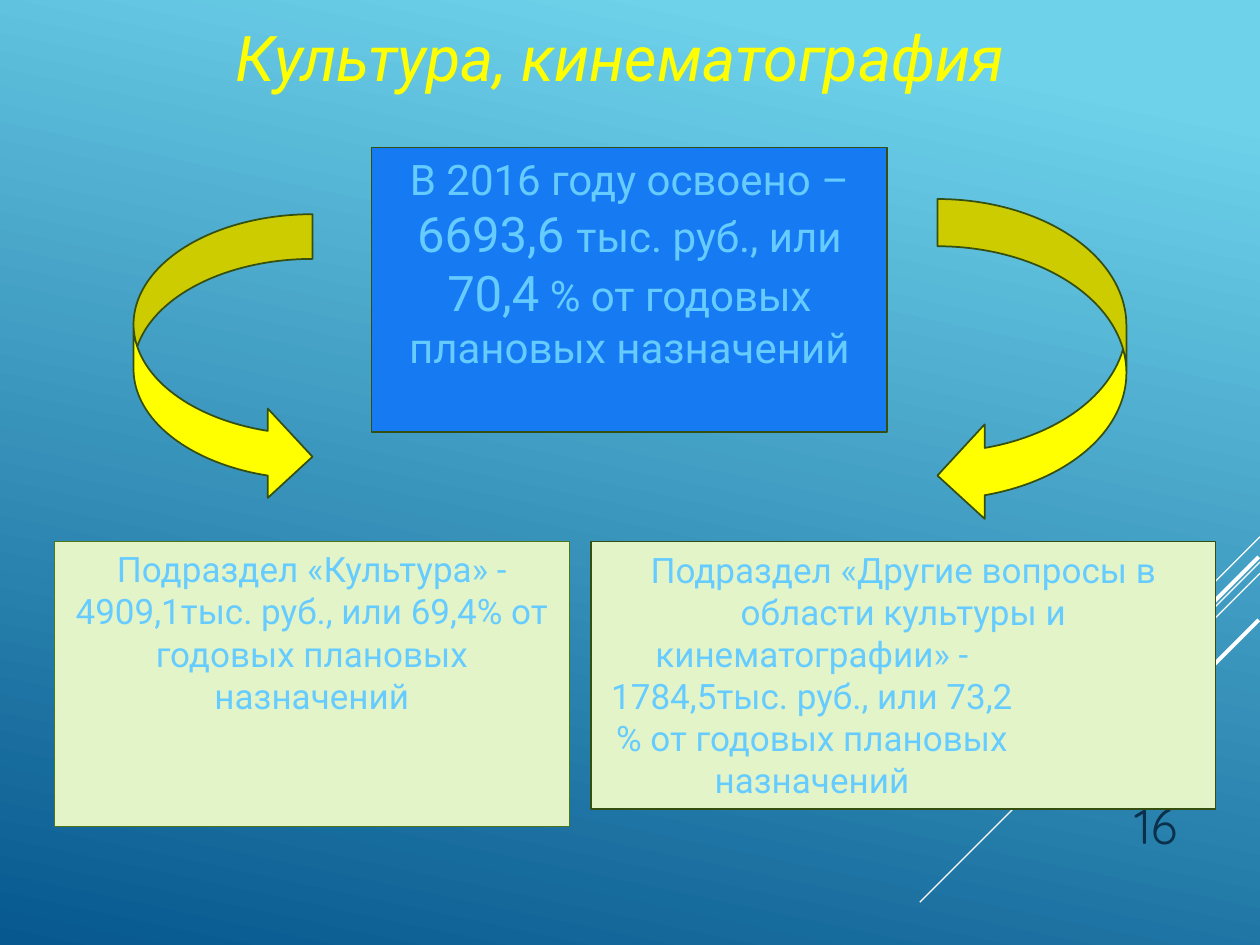
from lxml.etree import SubElement
from pptx import Presentation
from pptx.dml.color import RGBColor
from pptx.enum.shapes import MSO_CONNECTOR, MSO_SHAPE
from pptx.enum.text import MSO_ANCHOR, PP_ALIGN
from pptx.oxml.ns import qn
from pptx.util import Inches, Pt

C = {
    "sky": "6ED2EB", "deep": "06588E", "white": "FFFFFF", "number": "0A304A",
    "yellow": "FFFF00", "text": "66CCFF", "blue": "167BF3", "pale": "E3F4C9",
    "edge": "354F10", "green": "4F7717",
}
RGB = {name: RGBColor.from_string(value) for name, value in C.items()}

prs = Presentation()
prs.slide_width, prs.slide_height = Inches(10), Inches(7.5)
COL, ROW = prs.slide_width / 100, prs.slide_height / 75
s = prs.slides.add_slide(prs.slide_layouts[6])


def grid(x, y, w, h):
    """Turn columns and rows into left, top, width and height."""
    return int(x * COL), int(y * ROW), int(w * COL), int(h * ROW)


def write(sp, paragraphs, color, font="Roboto", italic=False,
          align=PP_ALIGN.CENTER, anchor=MSO_ANCHOR.TOP):
    """Fill a shape with paragraphs, each a list of (text, size) runs."""
    tf = sp.text_frame
    tf.word_wrap = True
    tf.vertical_anchor = anchor
    for i, runs in enumerate(paragraphs):
        p = tf.add_paragraph() if i else tf.paragraphs[0]
        p.alignment = align
        for text, size in runs:
            r = p.add_run()
            r.text = text
            r.font.name, r.font.size = font, Pt(size)
            r.font.italic = italic
            r.font.color.rgb = RGB[color]
    return tf


# Background
fill = s.background.fill
fill.gradient()
fill.gradient_angle = 360 - 102
for stop, (pos, color) in zip(fill.gradient_stops, [(0.1, "sky"), (1, "deep")]):
    stop.position = pos
    stop.color.rgb = RGB[color]

# Diagonal rays, each at 45 degrees: start column, start row, run, width
for x, y, run, width in [
    (100, 42.6, 8.3, 0.75), (100, 44.6, 27, 0.75), (100, 45.5, 17.2, 0.75),
    (99.9, 44.2, 15.7, 2.25), (99.9, 49.2, 11.4, 2.25),
]:
    start, end = grid(x, y, 0, 0)[:2], grid(x - run, y + run, 0, 0)[:2]
    ray = s.shapes.add_connector(MSO_CONNECTOR.STRAIGHT, *start, *end)
    ray.line.color.rgb = RGB["white"]
    ray.line.width = Pt(width)
    SubElement(ray._element.spPr, qn("a:effectLst"))

# Slide number and title
number = s.shapes.add_textbox(*grid(85, 61, 9.4, 7.3))
write(number, [[("16", 28)]], "number", font="Quicksand",
      align=PP_ALIGN.RIGHT, anchor=MSO_ANCHOR.BOTTOM)
title = s.shapes.add_textbox(*grid(2.8, 1, 92.9, 7.1))
write(title, [[("Культура, кинематография", 36)]], "yellow", italic=True)

# Boxes and arrows: preset, place, fill, line, line width, paragraphs
culture = [[("Подраздел «Культура» - 4909,1тыс. руб., или 69,4% от годовых "
             "плановых назначений", 20)]]
other = [
    [("Подраздел «Другие вопросы в области культуры и", 20)],
    [("кинематографии» -", 20)],
    [("1784,5тыс. руб., или 73,2 % от годовых плановых назначений", 20)],
]
total = [[("В 2016 году освоено – ", 24), ("6693,6 ", 28),
          ("тыс. руб., или ", 24), ("70,4", 28),
          (" % от годовых плановых назначений", 24)]]
for preset, place, color, edge, width, paragraphs in [
    (MSO_SHAPE.RECTANGLE, (4.3, 43, 40.9, 22.6), "pale", "green", 0.75, culture),
    (MSO_SHAPE.RECTANGLE, (46.9, 43, 49.6, 21.2), "pale", "edge", 0.75, other),
    (MSO_SHAPE.RECTANGLE, (29.5, 11.7, 40.9, 22.6), "blue", "edge", 0.75, total),
    (MSO_SHAPE.CURVED_RIGHT_ARROW, (10.6, 17, 14.2, 22.8), "yellow", "edge", 1, []),
    (MSO_SHAPE.CURVED_LEFT_ARROW, (74.4, 15.8, 15, 25.7), "yellow", "edge", 1, []),
]:
    sp = s.shapes.add_shape(preset, *grid(*place))
    sp.shadow.inherit = False
    sp.fill.solid()
    sp.fill.fore_color.rgb = RGB[color]
    sp.line.color.rgb = RGB[edge]
    sp.line.width = Pt(width)
    tf = write(sp, paragraphs, "text")
    if paragraphs is other:
        # The second line sits left of centre
        tf.paragraphs[1]._p.get_or_add_pPr().set("marR", str(int(14.5 * COL)))

prs.save("out.pptx")
